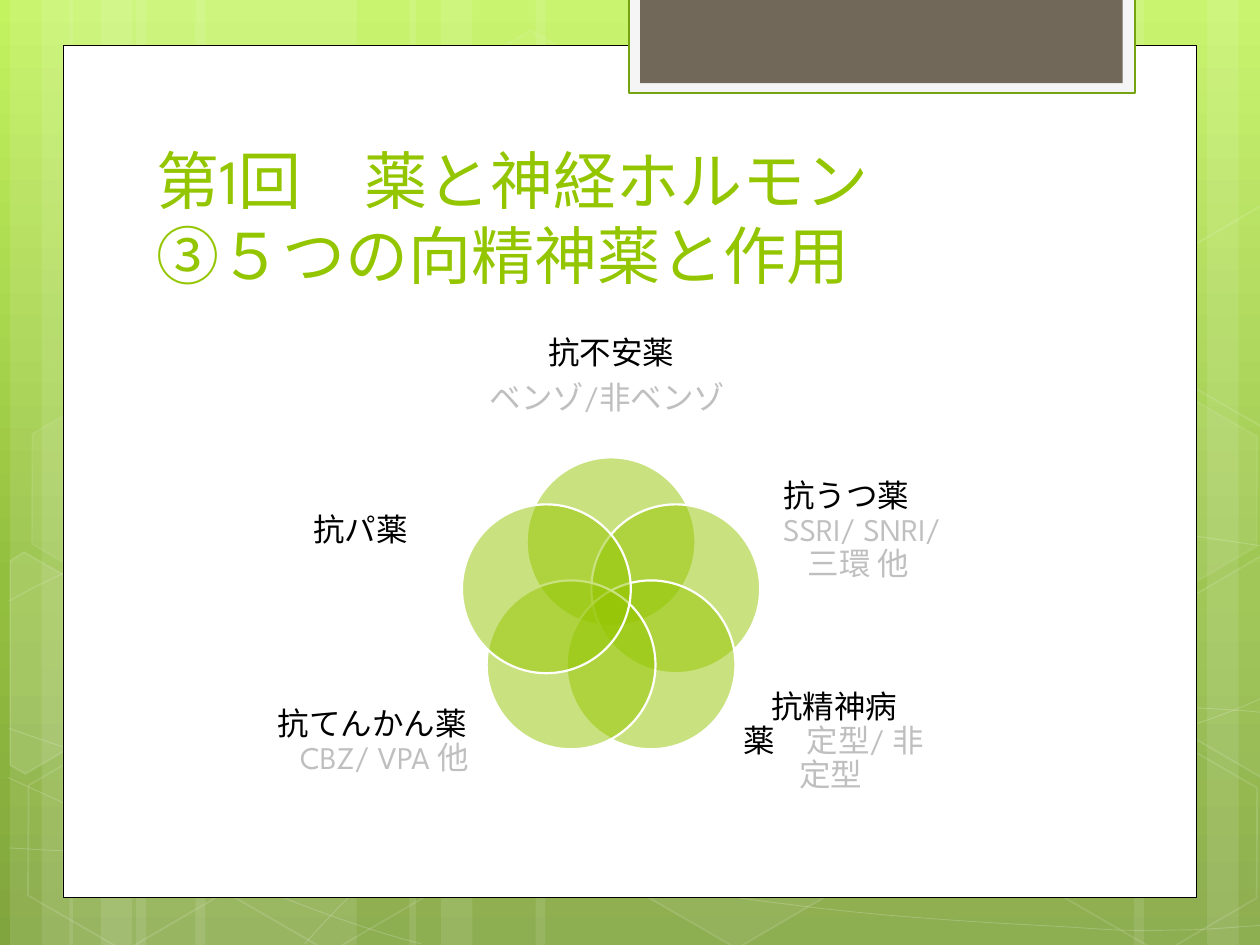
from copy import deepcopy
from dataclasses import dataclass
from math import cos, radians, sin

from pptx import Presentation
from pptx.dml.color import RGBColor
from pptx.enum import shapes, text
from pptx.oxml.ns import qn
from pptx.util import Inches, Pt
from lxml import etree


@dataclass(frozen=True)
class Theme:
    font: str = "League Spartan"
    title_size: int = 36
    label_size: int = 18
    green: str = "94C600"
    frame: str = "74A510"
    tab: str = "71685A"
    tab_edge: str = "F5F5F5"
    white: str = "FFFFFF"
    black: str = "000000"
    detail: str = "BFBFBF"
    sky: tuple = (("C3F35F", 0), ("93BF3F", 62), ("81A53E", 100))


THEME = Theme()


def paint(fill, colour, alpha=100):
    """Make a shape or line fill solid with the given opacity, or empty if no colour."""
    if colour is None:
        fill.background()
        return
    fill.solid()
    fill.fore_color.rgb = RGBColor.from_string(colour)
    if alpha < 100:
        solid = fill._xPr.find(qn("a:solidFill"))
        etree.SubElement(solid[0], qn("a:alpha"), val=str(alpha * 1000))


def style(shape, fill=None, fill_alpha=100, line=None, width=1, line_alpha=100):
    shape.shadow.inherit = False
    paint(shape.fill, fill, fill_alpha)
    paint(shape.line.fill, line, line_alpha)
    if line:
        shape.line.width = Pt(width)


prs = Presentation()
prs.slide_width, prs.slide_height = Inches(10), Inches(7.5)
slide = prs.slides.add_slide(prs.slide_layouts[5])
canvas = slide.shapes

# Background gradient, top to bottom
sky = slide.background.fill
sky.gradient()
sky.gradient_angle = 270
stops = sky._fill._gradFill.find(qn("a:gsLst"))
stops.append(deepcopy(stops[0]))
for stop, (colour, position) in zip(sky.gradient_stops, THEME.sky):
    stop.color.rgb = RGBColor.from_string(colour)
    stop.position = position / 100

# Translucent vertical stripes: left, width, rotation
stripes = [(1.08, 1.75, 0), (0.08, 0.5, 0), (0.33, 0.83, 0), (1.55, 1.75, 0),
           (0.55, 0.5, 0), (0.8, 0.83, 0), (7.33, 1.75, 180), (9.58, 0.5, 180),
           (9, 0.83, 180), (4.25, 3.08, 0), (3.25, 0.5, 0), (3.5, 0.83, 0)]
for left, width, rotation in stripes:
    stripe = canvas.add_shape(shapes.MSO_SHAPE.RECTANGLE, Inches(left), 0,
                              Inches(width), prs.slide_height)
    stripe.rotation = rotation
    style(stripe, THEME.white, 10)

# Fine waves: a start point, then three points for each cubic segment
waves = [
    [(0.07, 6.73), (0.61, 6.76), (1.15, 6.79), (1.9, 6.78), (2.65, 6.77), (3.58, 6.75),
     (4.58, 6.65), (5.58, 6.55), (7, 6.36), (7.92, 6.17), (8.83, 5.98), (9.77, 5.68),
     (10.07, 5.51)],
    [(0.07, 4.77), (0.36, 4.61), (0.65, 4.46), (1.21, 4.31), (1.78, 4.16), (2.59, 3.94),
     (3.47, 3.87), (4.36, 3.8), (5.44, 3.79), (6.54, 3.87), (7.64, 3.95), (9.47, 4.26),
     (10.07, 4.34)],
    [(0.06, 6.17), (1.27, 6.72), (2.47, 7.27), (3.34, 7.49)],
    [(0.07, 5.78), (0.38, 5.89), (0.7, 6), (1.28, 6.16), (1.86, 6.31), (2.73, 6.56),
     (3.57, 6.73), (4.4, 6.9), (5.45, 7.08), (6.28, 7.18), (7.11, 7.29), (8, 7.33),
     (8.53, 7.36), (9.05, 7.4), (9.19, 7.38), (9.45, 7.38), (9.71, 7.37), (9.89, 7.35),
     (10.07, 7.34)],
    [(2.42, 7.49), (2.6, 7.29), (2.78, 7.09), (3.02, 6.91), (3.26, 6.73), (3.6, 6.53),
     (3.88, 6.39), (4.16, 6.25), (4.33, 6.19), (4.7, 6.09), (5.06, 5.99), (5.73, 5.85),
     (6.08, 5.78), (6.44, 5.71), (6.49, 5.71), (6.8, 5.69), (7.11, 5.66), (7.6, 5.63),
     (7.94, 5.62), (8.29, 5.61), (8.86, 5.62), (8.86, 5.62), (8.86, 5.62), (9.53, 5.62),
     (9.53, 5.62), (9.71, 5.63), (9.88, 5.64), (9.97, 5.65), (10.06, 5.66),
     (10.03, 5.65), (10.06, 5.66)],
]
for points in waves:
    start, *others = [tuple(map(Inches, point)) for point in points]
    builder = canvas.build_freeform(*start)
    builder.add_line_segments(others, close=False)
    wave = builder.convert_to_shape()
    style(wave, line=THEME.white, width=0.5, line_alpha=20)
    # Every three straight segments become one cubic curve
    segments = list(wave._element.iter(qn("a:lnTo")))
    for first in range(0, len(segments), 3):
        curve = etree.Element(qn("a:cubicBezTo"))
        segments[first].addprevious(curve)
        for segment in segments[first:first + 3]:
            curve.append(segment[0])
            segment.getparent().remove(segment)

# Hexagons: left, top, fill opacity (0 for none), line opacity
TILT = 30
hexagons = [(3.34, 0.36, 4, 8), (4.97, 5.89, 6, 12), (0.11, 5.91, 0, 12),
            (0.14, 3.12, 7, 8), (1.74, 5.92, 0, 12), (7.53, 4.53, 10, 12),
            (8.34, 5.93, 0, 12), (8.34, 3.14, 7, 8)]
for left, top, fill_alpha, line_alpha in hexagons:
    hexagon = canvas.add_shape(shapes.MSO_SHAPE.HEXAGON, Inches(left), Inches(top),
                               Inches(1.75), Inches(1.52))
    hexagon.adjustments[0] = 0.285
    hexagon.rotation = TILT
    style(hexagon, THEME.white if fill_alpha else None, fill_alpha,
          THEME.white, 1, line_alpha)

# Hexagons cut off by the slide edge: fill opacity, centre, corners as they appear tilted
cut_hexagons = [
    (10, (0.36, 5.35),
     [(0.08, 4.45), (0.19, 4.38), (0.96, 4.82), (0.95, 5.7), (0.2, 6.14), (0.08, 6.07)]),
    (4, (9.85, 5.2),
     [(9.26, 4.85), (10.01, 4.41), (10.09, 4.46), (10.09, 6.13), (10.02, 6.17), (9.26, 5.73)]),
    (0, (9.85, 2.41),
     [(9.26, 2.07), (10.01, 1.63), (10.1, 1.68), (10.09, 3.35), (10.02, 3.39), (9.26, 2.95)]),
]
c, s = cos(radians(TILT)), sin(radians(TILT))
for fill_alpha, (mid_x, mid_y), corners in cut_hexagons:
    start, *others = [(Inches(mid_x + (x - mid_x) * c + (y - mid_y) * s),
                       Inches(mid_y - (x - mid_x) * s + (y - mid_y) * c))
                      for x, y in corners]
    builder = canvas.build_freeform(*start)
    builder.add_line_segments(others, close=True)
    cut_hexagon = builder.convert_to_shape()
    cut_hexagon.rotation = TILT
    style(cut_hexagon, THEME.white if fill_alpha else None, fill_alpha,
          THEME.white, 1, 12)

# White page and the tab at its top
panels = [((0.5, 0.36, 9, 6.76), THEME.white, THEME.black, 0.5),
          ((4.99, -0.02, 4.02, 0.76), THEME.tab_edge, THEME.frame, 1.25),
          ((5.08, -0.02, 3.83, 0.68), THEME.tab, None, 0)]
for box, fill, line, width in panels:
    panel = canvas.add_shape(shapes.MSO_SHAPE.RECTANGLE, *map(Inches, box))
    style(panel, fill, line=line, width=width)

# Title, brought in front of the page
title = canvas.title
canvas._spTree.append(title._element)
title.left, title.top, title.width, title.height = map(Inches, (1.14, 1.12, 7.68, 1.25))
heading = title.text_frame
heading.auto_size = text.MSO_AUTO_SIZE.NONE
heading.word_wrap = True
heading.vertical_anchor = text.MSO_ANCHOR.BOTTOM
lines = heading.paragraphs[0]
lines.alignment = text.PP_ALIGN.LEFT
for index, wording in enumerate(("第1回　薬と神経ホルモン", "③５つの向精神薬と作用")):
    if index:
        lines.add_line_break()
    run = lines.add_run()
    run.text = wording
    run.font.name, run.font.size = THEME.font, Pt(THEME.title_size)
    run.font.color.rgb = RGBColor.from_string(THEME.green)

# Five overlapping petals, clockwise from the top, each with its label:
# label box, then paragraphs of (wording, colour) runs
drugs = [
    ((3.75, 2.54, 2.2, 0.9), [[("抗不安薬", THEME.black)], [("ベンゾ/非ベンゾ ", THEME.detail)]]),
    ((6.14, 3.73, 1.4, 0.98), [[("抗うつ薬　", THEME.black), ("SSRI/ SNRI/ 三環 他 ", THEME.detail)]]),
    ((5.9, 5.4, 1.44, 0.98), [[("抗精神病薬　", THEME.black), ("定型/ 非定型 ", THEME.detail)]]),
    ((2.17, 5.4, 1.82, 0.98), [[("抗てんかん薬　", THEME.black), ("CBZ/ VPA 他 ", THEME.detail)]]),
    ((2.16, 3.73, 1.4, 0.98), [[("抗パ薬", THEME.black)]]),
]
CENTRE_X, CENTRE_Y, ORBIT, DIAMETER = 4.85, 4.84, 0.54, 1.34
for index, (box, paragraphs) in enumerate(drugs):
    angle = radians(index * 360 / len(drugs) - 90)
    petal = canvas.add_shape(
        shapes.MSO_SHAPE.OVAL,
        Inches(CENTRE_X + ORBIT * cos(angle) - DIAMETER / 2),
        Inches(CENTRE_Y + ORBIT * sin(angle) - DIAMETER / 2),
        Inches(DIAMETER), Inches(DIAMETER))
    style(petal, THEME.green, 50, THEME.white, 1.25)

    label = canvas.add_textbox(*map(Inches, box)).text_frame
    label.word_wrap = True
    label.vertical_anchor = text.MSO_ANCHOR.MIDDLE
    label.margin_left = label.margin_top = label.margin_right = label.margin_bottom = 0
    for number, runs in enumerate(paragraphs):
        paragraph = label.add_paragraph() if number else label.paragraphs[0]
        paragraph.alignment = text.PP_ALIGN.CENTER
        paragraph.line_spacing = 0.9
        paragraph.space_after = Pt(6.3)
        for wording, colour in runs:
            run = paragraph.add_run()
            run.text = wording
            run.font.name, run.font.size = THEME.font, Pt(THEME.label_size)
            run.font.color.rgb = RGBColor.from_string(colour)

prs.save("out.pptx")
